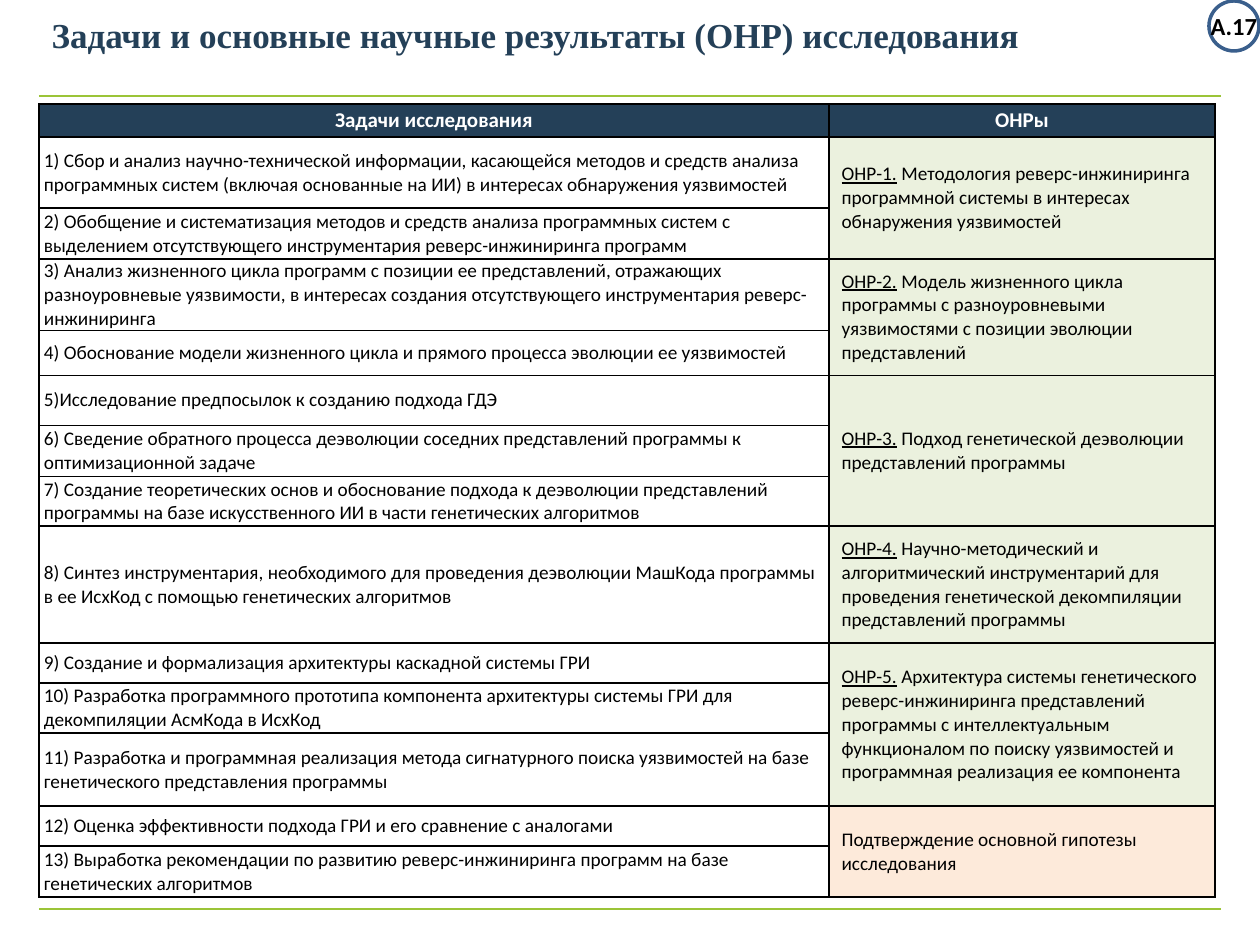
from dataclasses import dataclass

from lxml import etree
from pptx import Presentation
from pptx.dml.color import RGBColor
from pptx.enum.shapes import MSO_CONNECTOR, MSO_SHAPE
from pptx.enum.text import MSO_ANCHOR, PP_ALIGN
from pptx.oxml.ns import qn
from pptx.util import Emu, Pt

MIDDLE = MSO_ANCHOR.MIDDLE
LEFT, CENTER = PP_ALIGN.LEFT, PP_ALIGN.CENTER
STRAIGHT = MSO_CONNECTOR.STRAIGHT
OVAL = MSO_SHAPE.OVAL

EMU_PER_PX = 914400 / 126
TITLE_ONLY = 5


@dataclass(frozen=True)
class Theme:
    title_font: str = "Times New Roman"
    body_font: str = "Calibri"
    navy: str = "244058"
    lime: str = "9BC438"
    blue: str = "3A5F8C"
    green: str = "EBF1DE"
    peach: str = "FDEADA"
    white: str = "FFFFFF"
    black: str = "000000"
    title_size: int = 20
    badge_size: int = 14
    header_size: int = 12
    body_size: int = 11


THEME = Theme()

HEADINGS = ("Задачи исследования", "ОНРы")
HEADER_HEIGHT = 33
COLUMN_WIDTHS = (790, 386)

# Each result: label, text, fill, and its tasks with their row heights.
RESULTS = [
    ("ОНР-1.", " Методология реверс-инжиниринга программной системы в интересах обнаружения уязвимостей",
     THEME.green, [
         ("1) Сбор и анализ научно-технической информации, касающейся методов и средств анализа "
          "программных систем (включая основанные на ИИ) в интересах обнаружения уязвимостей", 71),
         ("2) Обобщение и систематизация методов и средств анализа программных систем с "
          "выделением отсутствующего инструментария реверс-инжиниринга программ", 51)]),
    ("ОНР-2.", " Модель жизненного цикла программы с разноуровневыми уязвимостями с позиции "
     "эволюции представлений",
     THEME.green, [
         ("3) Анализ жизненного цикла программ с позиции ее представлений, отражающих "
          "разноуровневые уязвимости, в интересах создания отсутствующего инструментария "
          "реверс-инжиниринга", 71),
         ("4) Обоснование модели жизненного цикла и прямого процесса эволюции ее уязвимостей", 45)]),
    ("ОНР-3.", " Подход генетической деэволюции представлений программы",
     THEME.green, [
         ("5)Исследование предпосылок к созданию подхода ГДЭ", 50),
         ("6) Сведение обратного процесса деэволюции соседних представлений программы к "
          "оптимизационной задаче", 51),
         ("7) Создание теоретических основ и обоснование подхода к деэволюции представлений "
          "программы на базе искусственного ИИ в части генетических алгоритмов", 50)]),
    ("ОНР-4.", " Научно-методический и алгоритмический инструментарий для проведения генетической "
     "декомпиляции представлений программы",
     THEME.green, [
         ("8) Синтез инструментария, необходимого для проведения деэволюции МашКода программы "
          "в ее ИсхКод с помощью генетических алгоритмов", 117)]),
    ("ОНР-5.", " Архитектура системы генетического реверс-инжиниринга представлений программы с "
     "интеллектуальным функционалом по поиску уязвимостей и программная реализация ее компонента",
     THEME.green, [
         ("9) Создание и формализация архитектуры каскадной системы ГРИ", 40),
         ("10) Разработка программного прототипа компонента архитектуры системы ГРИ для "
          "декомпиляции АсмКода в ИсхКод", 50),
         ("11) Разработка и программная реализация метода сигнатурного поиска уязвимостей на базе "
          "генетического представления программы", 73)]),
    ("", "Подтверждение основной гипотезы исследования",
     THEME.peach, [
         ("12) Оценка эффективности подхода ГРИ и его сравнение с аналогами", 40),
         ("13) Выработка рекомендации по развитию реверс-инжиниринга программ на базе "
          "генетических алгоритмов", 51)]),
]


def px(length):
    return Emu(round(length * EMU_PER_PX))


def color(code):
    return RGBColor.from_string(code)


class SlideBuilder:
    def __init__(self, slide, theme):
        self.slide = slide
        self.theme = theme

    def style(self, paragraph, size, code, bold=False, align=LEFT, font=None):
        paragraph.alignment = align
        paragraph.font.name = font or self.theme.body_font
        paragraph.font.size = Pt(size)
        paragraph.font.bold = bold
        paragraph.font.color.rgb = color(code)

    def title(self, text, x, y, width, height):
        title = self.slide.shapes.title
        title.left, title.top, title.width, title.height = map(px, (x, y, width, height))
        title.text_frame.text = text
        title.text_frame.vertical_anchor = MIDDLE
        self.style(title.text_frame.paragraphs[0], self.theme.title_size, self.theme.navy,
                   bold=True, font=self.theme.title_font)

    def rule(self, x1, x2, y):
        rule = self.slide.shapes.add_connector(STRAIGHT, px(x1), px(y), px(x2), px(y))
        rule.line.color.rgb = color(self.theme.lime)
        rule.line.width = Pt(1.5)
        etree.SubElement(rule._element.spPr, qn("a:effectLst"))

    def badge(self, text, x, y, diameter):
        badge = self.slide.shapes.add_shape(OVAL, px(x), px(y), px(diameter), px(diameter))
        badge.shadow.inherit = False
        badge.fill.solid()
        badge.fill.fore_color.rgb = color(self.theme.white)
        badge.line.color.rgb = color(self.theme.blue)
        badge.line.width = Pt(2)
        frame = badge.text_frame
        frame.margin_left = frame.margin_right = frame.margin_top = frame.margin_bottom = 0
        frame.word_wrap = False
        frame.vertical_anchor = MIDDLE
        frame.text = text
        self.style(frame.paragraphs[0], self.theme.badge_size, self.theme.black,
                   bold=True, align=CENTER)

    def table(self, x, y, column_widths, row_heights):
        table = self.slide.shapes.add_table(
            len(row_heights), len(column_widths), px(x), px(y),
            px(sum(column_widths)), px(sum(row_heights))).table
        table.first_row = table.horz_banding = False
        for column, width in zip(table.columns, column_widths):
            column.width = px(width)
        for row, height in zip(table.rows, row_heights):
            row.height = px(height)
        for cell in table.iter_cells():
            self.border(cell)
        return table

    def border(self, cell):
        properties = cell._tc.get_or_add_tcPr()
        for side in ("a:lnL", "a:lnR", "a:lnT", "a:lnB"):
            edge = etree.SubElement(properties, qn(side), w=str(Pt(1)))
            fill = etree.SubElement(edge, qn("a:solidFill"))
            etree.SubElement(fill, qn("a:srgbClr"), val=self.theme.black)

    def cell(self, cell, text, label="", fill=None, tight=True, header=False):
        """Fill a cell; the label is underlined and precedes the text."""
        if fill:
            cell.fill.solid()
            cell.fill.fore_color.rgb = color(fill)
        else:
            cell.fill.background()
        cell.vertical_anchor = MIDDLE
        if tight:
            cell.margin_left = cell.margin_right = px(5)
            cell.margin_top = cell.margin_bottom = 0
        paragraph = cell.text_frame.paragraphs[0]
        if label:
            run = paragraph.add_run()
            run.text = label
            run.font.underline = True
        paragraph.add_run().text = text
        if header:
            self.style(paragraph, self.theme.header_size, self.theme.white, bold=True, align=CENTER)
        else:
            self.style(paragraph, self.theme.body_size, self.theme.black)


def main():
    presentation = Presentation()
    presentation.slide_width, presentation.slide_height = px(1260), px(945)
    slide = presentation.slides.add_slide(presentation.slide_layouts[TITLE_ONLY])
    builder = SlideBuilder(slide, THEME)

    for y in (909, 96):
        builder.rule(39, 1221, y)
    builder.title("Задачи и основные научные результаты (ОНР) исследования", 39, 6, 1183, 56)

    task_heights = [height for *_, tasks in RESULTS for _, height in tasks]
    table = builder.table(39, 104, COLUMN_WIDTHS, [HEADER_HEIGHT, *task_heights])
    for column, heading in enumerate(HEADINGS):
        builder.cell(table.cell(0, column), heading, fill=THEME.navy, header=True)
    row = 1
    for label, result, fill, tasks in RESULTS:
        result_cell = table.cell(row, 1)
        if len(tasks) > 1:
            result_cell.merge(table.cell(row + len(tasks) - 1, 1))
        builder.cell(result_cell, result, label, fill, tight=False)
        for task, _ in tasks:
            builder.cell(table.cell(row, 0), task)
            row += 1

    builder.badge("А.17", 1209, 1, 50)
    presentation.save("out.pptx")


if __name__ == "__main__":
    main()
